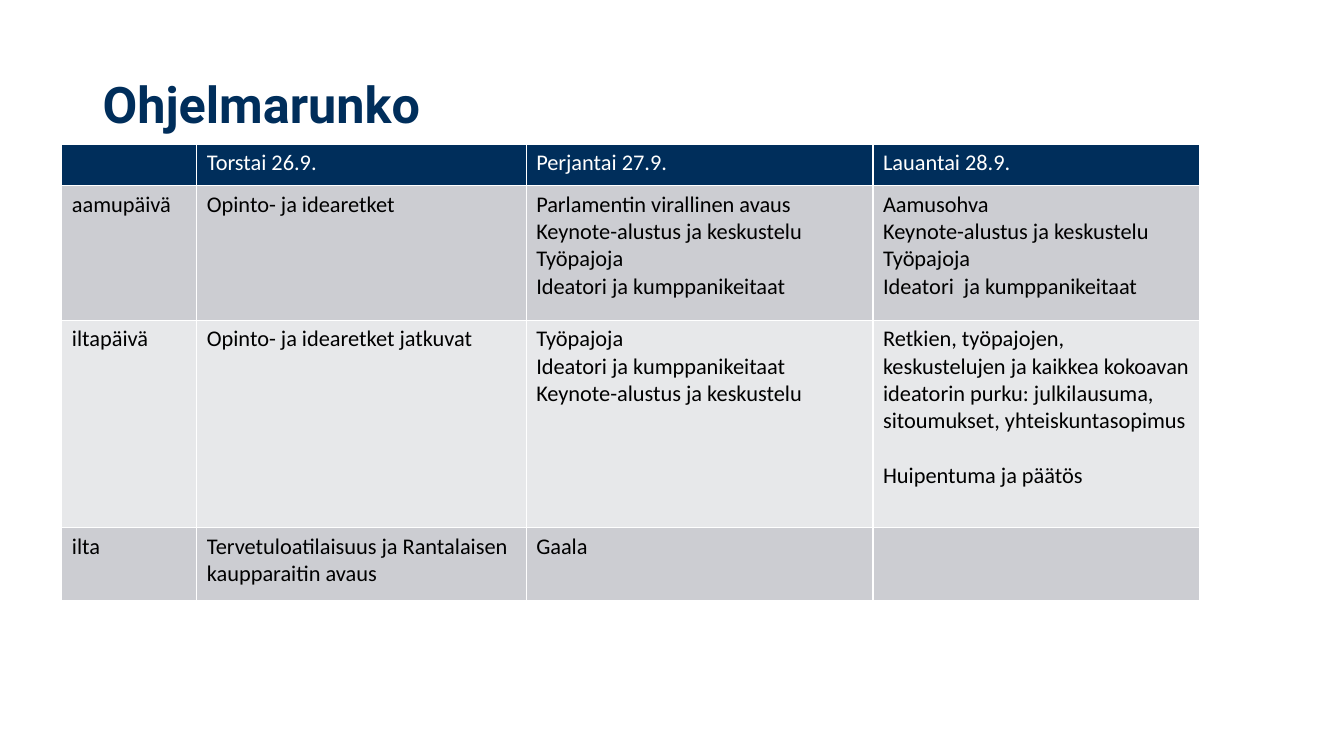
from pptx import Presentation
from pptx.dml.color import RGBColor
from pptx.enum.text import MSO_ANCHOR, MSO_AUTO_SIZE, PP_ALIGN
from pptx.util import Cm, Pt

LEFT = PP_ALIGN.LEFT
TOP = MSO_ANCHOR.TOP
FIXED = MSO_AUTO_SIZE.NONE

COLORS = {
    "navy": "002E5B",
    "white": "FFFFFF",
    "black": "000000",
    "dark": "CCCDD2",
    "light": "E7E8EA",
}
WIDTHS = [3.4, 8.3, 8.74, 8.23]
HEIGHTS = [1.04, 3.39, 5.23, 1.84]
GAP = Pt(19.5)
CLOSING = "Huipentuma ja päätös"
ROWS = [
    ["", "Torstai 26.9.", "Perjantai 27.9.", "Lauantai 28.9."],
    [
        "aamupäivä",
        "Opinto- ja idearetket",
        "Parlamentin virallinen avaus\nKeynote-alustus ja keskustelu\n"
        "Työpajoja\nIdeatori ja kumppanikeitaat",
        "Aamusohva\nKeynote-alustus ja keskustelu\n"
        "Työpajoja\nIdeatori  ja kumppanikeitaat",
    ],
    [
        "iltapäivä",
        "Opinto- ja idearetket jatkuvat",
        "Työpajoja\nIdeatori ja kumppanikeitaat\nKeynote-alustus ja keskustelu",
        "Retkien, työpajojen, keskustelujen ja kaikkea kokoavan ideatorin purku: "
        "julkilausuma, sitoumukset, yhteiskuntasopimus\n" + CLOSING,
    ],
    ["ilta", "Tervetuloatilaisuus ja Rantalaisen kaupparaitin avaus", "Gaala", ""],
]


def color(name):
    return RGBColor.from_string(COLORS[name])


def style(para, face, size, tone, bold=False):
    font = para.font
    font.name = face
    font.size = Pt(size)
    font.bold = bold
    font.color.rgb = color(tone)


def add_title(slide, text):
    title = slide.shapes.title
    title.left, title.top = Cm(2.33), Cm(1.88)
    title.width, title.height = Cm(28.17), Cm(2.79)
    frame = title.text_frame
    frame.text = text
    frame.auto_size = FIXED
    frame.vertical_anchor = TOP
    para = frame.paragraphs[0]
    para.alignment = LEFT
    para.line_spacing = 0.9
    style(para, "Roboto", 36, "navy", True)


def fill_cell(cell, text, fill, tone):
    cell.fill.solid()
    cell.fill.fore_color.rgb = color(fill)
    cell.text = text
    for para in cell.text_frame.paragraphs:
        style(para, "Calibri", 16, tone)
        if para.text == CLOSING:
            para.space_before = GAP


def add_plan(slide):
    frame = slide.shapes.add_table(
        len(ROWS), len(WIDTHS), Cm(1.56), Cm(3.64), Cm(sum(WIDTHS)), Cm(sum(HEIGHTS))
    )
    table = frame.table
    for col, width in zip(table.columns, WIDTHS):
        col.width = Cm(width)
    for i, texts in enumerate(ROWS):
        table.rows[i].height = Cm(HEIGHTS[i])
        fill = "navy" if i == 0 else "dark" if i % 2 else "light"
        tone = "black" if i else "white"
        for j, text in enumerate(texts):
            fill_cell(table.cell(i, j), text, fill, tone)


def main():
    deck = Presentation()
    deck.slide_width, deck.slide_height = Cm(33.87), Cm(19.05)
    slide = deck.slides.add_slide(deck.slide_layouts[5])
    add_title(slide, "Ohjelmarunko")
    add_plan(slide)
    deck.save("out.pptx")


if __name__ == "__main__":
    main()
